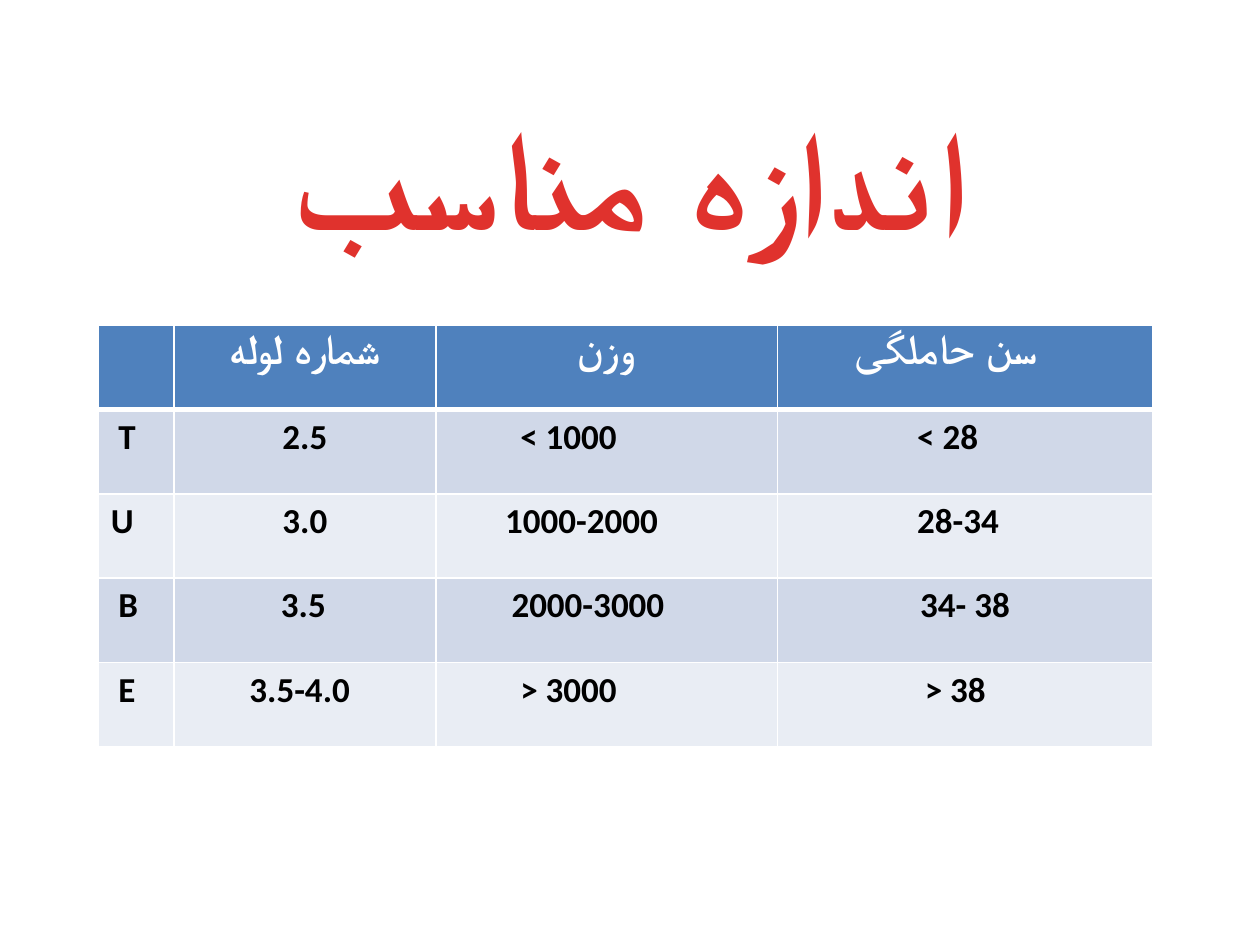
from pptx import Presentation
from pptx.dml.color import RGBColor
from pptx.enum.shapes import MSO_SHAPE as Shape
from pptx.enum.text import MSO_ANCHOR as Anchor, PP_ALIGN as Align
from pptx.oxml import parse_xml
from pptx.oxml.ns import nsdecls
from pptx.util import Inches, Pt

WHITE = RGBColor(0xFF, 0xFF, 0xFF)
BLACK = RGBColor(0, 0, 0)
RED = RGBColor(0xE0, 0x32, 0x2D)
BLUE = RGBColor(0x4F, 0x81, 0xBD)
BANDS = RGBColor(0xD0, 0xD8, 0xE8), RGBColor(0xE9, 0xED, 0xF4)

COLS = [0.6, 2.08, 2.71, 2.98]
ROW = 0.67
HEADS = ["", "شماره لوله", "وزن", "سن حاملگی"]
# Each entry: text and its indent in inches, or None when centred
SIZES = [
    [("T", 0.06), ("2.5", None), ("< 1000", 0.57), ("< 28", 1.01)],
    [("U", 0), ("3.0", None), ("1000-2000", 0.45), ("28-34", 1.01)],
    [("B", 0.06), ("3.5", 0.75), ("2000-3000", 0.5), ("34- 38", None)],
    [("E", 0.06), ("3.5-4.0", 0.5), ("> 3000", 0.57), ("> 38", 1.07)],
]


def write(frame, text, size=20, color=BLACK, align=Align.CENTER,
          rtl=False, spacing=None):
    para = frame.paragraphs[0]
    para.alignment = align
    if rtl:
        para._p.get_or_add_pPr().set("rtl", "1")
    run = para.add_run()
    run.text = text
    font = run.font
    font.name, font.size, font.bold = "Calibri", Pt(size), True
    font.color.rgb = color
    if spacing:
        run._r.get_or_add_rPr().set("spc", str(int(spacing * 100)))


def edge(cell, **widths):
    """Draw white borders; keys are the sides L, R, T, B, in points."""
    props = cell._tc.get_or_add_tcPr()
    for spot, side in enumerate("LRTB"):
        line = parse_xml(
            f'<a:ln{side} {nsdecls("a")} w="{Pt(widths.get(side, 1))}">'
            f'<a:solidFill><a:srgbClr val="{WHITE}"/></a:solidFill>'
            f'</a:ln{side}>')
        props.insert(spot, line)


class Deck:
    def __init__(self):
        self.prs = Presentation()
        self.prs.slide_width, self.prs.slide_height = Inches(10), Inches(7.5)
        self.slide = self.prs.slides.add_slide(self.prs.slide_layouts[6])

    def title(self, text, x, y, w, h):
        box = self.slide.shapes.add_shape(
            Shape.RECTANGLE, Inches(x), Inches(y), Inches(w), Inches(h))
        box.shadow.inherit = False
        box.fill.solid()
        box.fill.fore_color.rgb = WHITE
        box.line.fill.background()
        frame = box.text_frame
        frame.word_wrap = True
        frame.vertical_anchor = Anchor.MIDDLE
        write(frame, text, size=80, color=RED, spacing=0.5)

    def table(self, x, y):
        count = len(SIZES) + 1
        grid = self.slide.shapes.add_table(
            count, len(COLS), Inches(x), Inches(y),
            Inches(sum(COLS)), Inches(ROW * count)).table
        for col, width in zip(grid.columns, COLS):
            col.width = Inches(width)
        for row in grid.rows:
            row.height = Inches(ROW)

        for c, text in enumerate(HEADS):
            cell = self.cell(grid, 0, c, BLUE, B=3)
            if text:
                write(cell.text_frame, text, size=24, color=WHITE, rtl=c > 1)
        grid.cell(0, 3).margin_right = Inches(0.41)

        for r, line in enumerate(SIZES, 1):
            for c, (text, indent) in enumerate(line):
                cell = self.cell(grid, r, c, BANDS[(r - 1) % 2],
                                 T=3 if r == 1 else 1)
                align = Align.CENTER
                if indent is not None:
                    align = Align.LEFT
                    cell.margin_left = Inches(0.1 + indent)
                write(cell.text_frame, text, align=align)

    def cell(self, grid, r, c, color, **widths):
        cell = grid.cell(r, c)
        cell.fill.solid()
        cell.fill.fore_color.rgb = color
        edge(cell, **widths)
        return cell


def main():
    deck = Deck()
    deck.title("اندازه مناسب", 0.5, 0.6, 9, 1.57)
    deck.table(0.78, 2.58)
    deck.prs.save("out.pptx")


if __name__ == "__main__":
    main()
